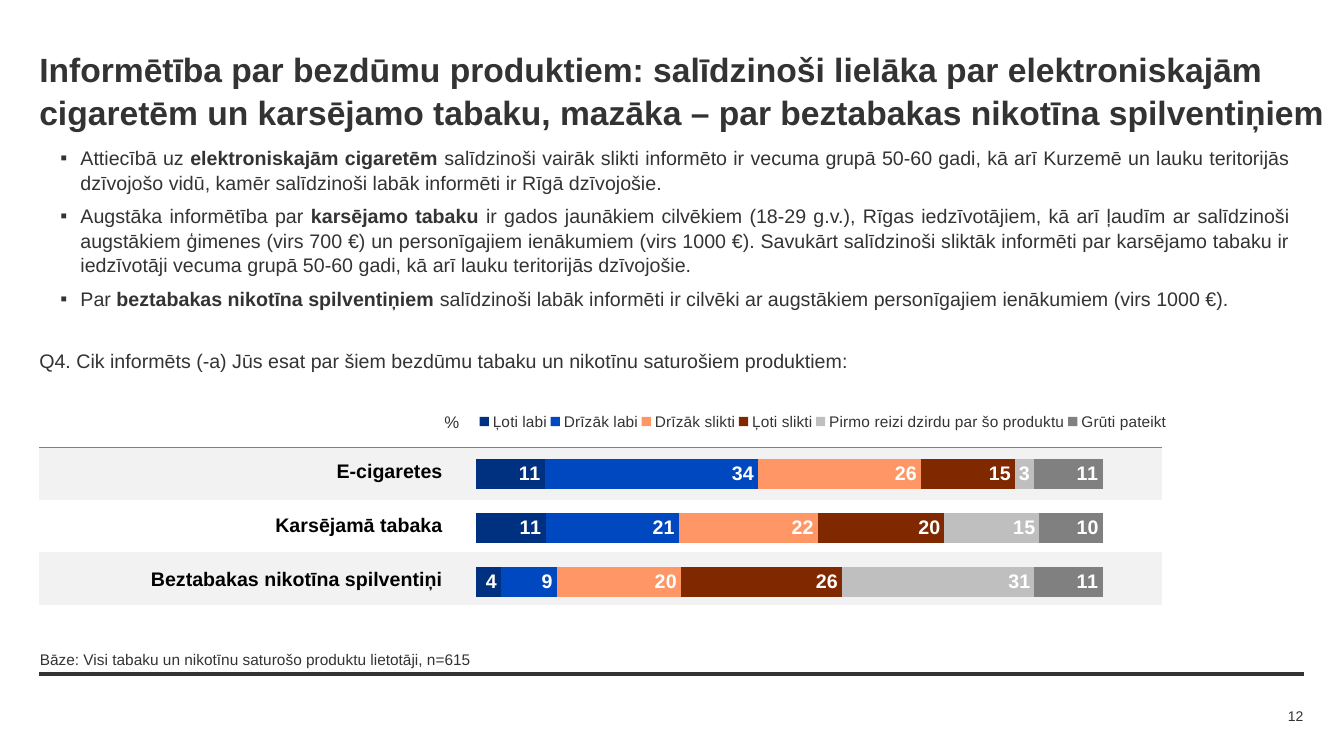
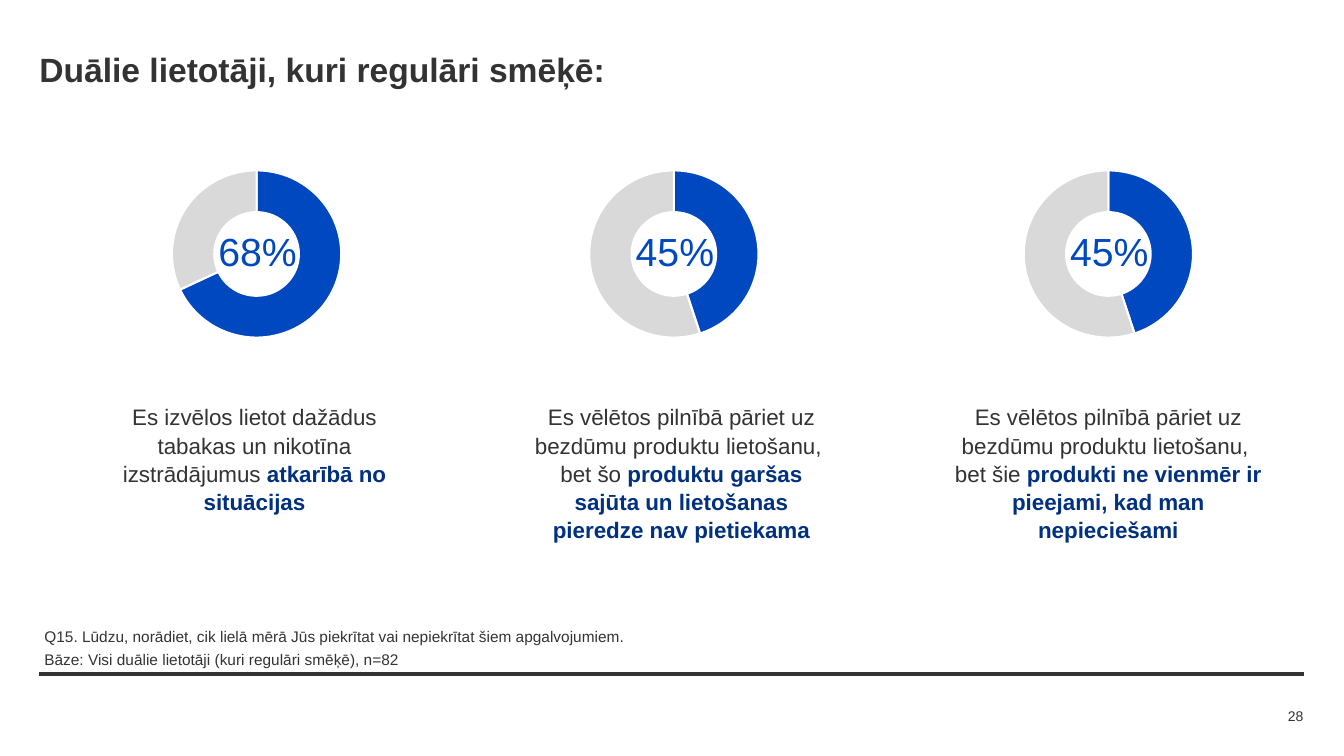
from lxml.etree import SubElement as Sub
from pptx import Presentation
from pptx.chart.data import CategoryChartData as Data
from pptx.dml.color import RGBColor as RGB
from pptx.enum.chart import XL_CHART_TYPE as Kind, XL_LABEL_POSITION as Spot, XL_LEGEND_POSITION as Side
from pptx.enum.shapes import MSO_CONNECTOR as Link
from pptx.enum.text import MSO_ANCHOR as Anchor, PP_ALIGN as Align
from pptx.oxml import parse_xml
from pptx.oxml.ns import nsdecls, qn
from pptx.util import Inches, Pt

INK = RGB(0x33, 0x33, 0x33)
BLACK = RGB(0, 0, 0)
WHITE = RGB(0xFF, 0xFF, 0xFF)
NAVY = RGB(0x00, 0x30, 0x80)
BLUE = RGB(0x00, 0x48, 0xBF)
PEACH = RGB(0xFF, 0x96, 0x66)
BROWN = RGB(0x80, 0x28, 0x00)
SILVER = RGB(0xBF, 0xBF, 0xBF)
GRAY = RGB(0x80, 0x80, 0x80)
PALE = RGB(0xD9, 0xD9, 0xD9)
BAND = RGB(0xF2, 0xF2, 0xF2)
FONT = "Arial"
CELL = Inches(0.1)
WIDE, HIGH = 133.33, 75
PLAIN = "{2D5ABB26-0587-4C30-8999-92F81FD0307C}"

HEAD_1 = ("Informētība par bezdūmu produktiem: salīdzinoši lielāka par elektroniskajām "
          "cigaretēm un karsējamo tabaku, mazāka – par beztabakas nikotīna spilventiņiem")
POINTS = [
    "Attiecībā uz *elektroniskajām cigaretēm *salīdzinoši vairāk slikti informēto ir vecuma grupā "
    "50-60 gadi, kā arī Kurzemē un lauku teritorijās dzīvojošo vidū, kamēr salīdzinoši labāk "
    "informēti ir Rīgā dzīvojošie.",
    "Augstāka informētība par *karsējamo tabaku *ir gados jaunākiem cilvēkiem (18-29 g.v.), Rīgas "
    "iedzīvotājiem, kā arī ļaudīm ar salīdzinoši augstākiem ģimenes (virs 700 €) un personīgajiem "
    "ienākumiem (virs 1000 €). Savukārt salīdzinoši sliktāk informēti par karsējamo tabaku ir "
    "iedzīvotāji vecuma grupā 50-60 gadi, kā arī lauku teritorijās dzīvojošie.",
    "Par *beztabakas nikotīna spilventiņiem *salīdzinoši labāk informēti ir cilvēki ar augstākiem "
    "personīgajiem ienākumiem (virs 1000 €).",
]
GOODS = ["E-cigaretes", "Karsējamā tabaka", "Beztabakas nikotīna spilventiņi"]
SERIES = [
    ("Ļoti labi", (11, 11, 4), NAVY),
    ("Drīzāk labi", (34, 21, 9), BLUE),
    ("Drīzāk slikti", (26, 22, 20), PEACH),
    ("Ļoti slikti", (15, 20, 26), BROWN),
    ("Pirmo reizi dzirdu par šo produktu", (3, 15, 31), SILVER),
    ("Grūti pateikt", (11, 10, 11), GRAY),
]
SWITCH = "Es vēlētos pilnībā pāriet uz bezdūmu produktu lietošanu, "
RINGS = [
    (68, 14.9, ["Es izvēlos lietot dažādus tabakas un nikotīna izstrādājumus *atkarībā no situācijas"]),
    (45, 56.3, [SWITCH, "bet šo *produktu garšas sajūta un lietošanas pieredze nav pietiekama"]),
    (45, 99.4, [SWITCH, "bet šie *produkti ne vienmēr ir pieejami, kad man nepieciešami"]),
]


def grid(*cells):
    """Turn grid cells into lengths."""
    return [round(n * CELL) for n in cells]


def part(box, x, y, w, h):
    """Place a part within a box, in grid cells."""
    return box[0] + x, box[1] + y, w, h


def style(font, size, color=INK, bold=None):
    """Set the face, size, colour and weight of a font."""
    font.name, font.size, font.bold = FONT, Pt(size), bold
    font.color.rgb = color


def write(frame, paras, size=14, color=INK, bold=False, strong=None, align=Align.LEFT,
          anchor=Anchor.TOP, pad=(0, 0, 0, 0), gap=0, lead=1.05, mark=None):
    """Fill a frame with paragraphs, where stars set off strong words."""
    frame.word_wrap, frame.vertical_anchor = True, anchor
    (frame.margin_left, frame.margin_top,
     frame.margin_right, frame.margin_bottom) = grid(*pad)
    for i, text in enumerate(paras):
        para = frame.paragraphs[0] if i == 0 else frame.add_paragraph()
        para.alignment, para.line_spacing = align, lead
        para.space_before = Pt(gap if i else 0)
        if mark:
            props = para._p.get_or_add_pPr()
            props.set("marL", str(Inches(0.7)))
            props.set("indent", str(-Inches(0.2)))
            Sub(props, qn("a:buFont")).set("typeface", FONT)
            Sub(props, qn("a:buChar")).set("char", mark)
        for j, words in enumerate(text.split("*")):
            if words:
                run = para.add_run()
                run.text = words
                style(run.font, size, strong or color if j % 2 else color, bold or j % 2 == 1)


def label(slide, box, *paras, **form):
    """Add a text box."""
    write(slide.shapes.add_textbox(*grid(*box)).text_frame, paras, **form)


def base(deck, head, page, note, left, width, tall):
    """Start a slide with title, rule, base note and page number."""
    slide = deck.slides.add_slide(deck.slide_layouts[5])
    title = slide.shapes.title
    title.left, title.top, title.width, title.height = grid(3.9, 4.7, width, tall)
    write(title.text_frame, [head], size=24, bold=True)
    rule = slide.shapes.add_connector(Link.STRAIGHT, *grid(3.9, 66.9, 129.4, 66.9))
    rule.line.color.rgb, rule.line.width = INK, Pt(3)
    Sub(rule._element.spPr, qn("a:effectLst"))
    label(slide, (left, 64.4, 98, 1.9), note, size=11, anchor=Anchor.BOTTOM)
    label(slide, (118.7, 69.9, 10.6, 2.2), page, size=10, align=Align.RIGHT, anchor=Anchor.MIDDLE)
    return slide


def table(slide, box, rows, cols):
    """Add a bare table with the given column widths."""
    shape = slide.shapes.add_table(rows, len(cols), *grid(*box))
    body = shape.table
    body.first_row = body.horz_banding = False
    body._tbl.tblPr.find(qn("a:tableStyleId")).text = PLAIN
    for col, width in zip(body.columns, cols):
        col.width = grid(width)[0]
    for cell in body.iter_cells():
        cell.fill.background()
    return body


def edge(cell, color, width):
    """Draw the top border of a cell."""
    cell._tc.get_or_add_tcPr().insert(0, parse_xml(
        f'<a:lnT {nsdecls("a")} w="{Pt(width)}"><a:solidFill><a:srgbClr val="{color}"/>'
        '</a:solidFill></a:lnT>'))


def pin(node, spot, shares, inner=False):
    """Fix the place of a chart part by shares of the chart."""
    for old in node.findall(qn("c:layout")):
        node.remove(old)
    lay = parse_xml(f'<c:layout {nsdecls("c")}><c:manualLayout/></c:layout>')
    if inner:
        Sub(lay[0], qn("c:layoutTarget")).set("val", "inner")
    for name in ("xMode", "yMode"):
        Sub(lay[0], qn("c:" + name)).set("val", "edge")
    for name, share in zip("xywh", shares):
        Sub(lay[0], qn("c:" + name)).set("val", str(share))
    node.insert(spot, lay)


def plot(slide, box, kind, cats, rows, size, shares):
    """Add a chart with a fixed plot area."""
    data = Data()
    data.categories = cats
    for name, vals in rows:
        data.add_series(name, vals)
    chart = slide.shapes.add_chart(kind, *grid(*box), data).chart
    chart.has_title = chart.has_legend = False
    style(chart.font, size)
    pin(chart._chartSpace.chart.plotArea, 0, shares, True)
    return chart


def bars(slide, box):
    """Draw the stacked bars over a banded table with row names."""
    bands = table(slide, part(box, 0, 3.6, 111.4, 20.8), 4, (29.1, 82.3))
    for i in range(4):
        for cell in bands.rows[i].cells:
            if i % 2 == 0:
                cell.fill.solid()
                cell.fill.fore_color.rgb = BAND
            if i == 0:
                edge(cell, GRAY, 0.5)
    chart = plot(slide, part(box, 16.7, -14.4, 111, 46), Kind.BAR_STACKED_100, "123",
                 [row[:2] for row in SERIES], 18, (0.24, 0.39, 0.56, 0.35))
    chart.category_axis.reverse_order = True
    chart.value_axis.has_major_gridlines = False
    chart.category_axis.visible = chart.value_axis.visible = False
    chart.plots[0].gap_width, chart.plots[0].overlap = 78, 100
    for row, (_, vals, color) in zip(chart.series, SERIES):
        row.format.fill.solid()
        row.format.fill.fore_color.rgb = color
        tags = row.data_labels
        tags.show_value, tags.number_format, tags.number_format_is_linked = True, "#", False
        tags.position = Spot.CENTER if min(vals) < 4 else Spot.INSIDE_END
        style(tags.font, 14, WHITE, True)
        if min(vals) < 4:
            for i in (1, 2):
                tag = row.points[i].data_label
                style(tag.font, 14, WHITE, True)
                tag.position = Spot.INSIDE_END
    chart.has_legend = True
    key = chart.legend
    key.position, key.include_in_layout = Side.RIGHT, False
    style(key.font, 11)
    pin(key._element, 1, (0.24, 0.31, 0.62, 0.05))
    names = table(slide, part(box, 3.2, 3.3, 36.9, 16), 3, (36.9,))
    for cell, name in zip(names.iter_cells(), GOODS):
        write(cell.text_frame, [name], color=BLACK, bold=True, align=Align.RIGHT, lead=1)
        cell.vertical_anchor = Anchor.MIDDLE
        (cell.margin_left, cell.margin_top,
         cell.margin_right, cell.margin_bottom) = grid(0.1, 0.1, 0.1, 0)
    label(slide, part(box, 40.2, 0, 3.7, 2), "%", size=12)


def ring(slide, box, share):
    """Draw one doughnut with its share in the middle."""
    chart = plot(slide, box, Kind.DOUGHNUT, "12", [("Series 1", (share, 100 - share))], 10,
                 (0.04, 0, 0.94, 1))
    chart.plots[0]._element.find(qn("c:holeSize")).set("val", "85")
    for i, color in enumerate((BLUE, PALE)):
        form = chart.series[0].points[i].format
        form.fill.solid()
        form.fill.fore_color.rgb = color
        form.line.color.rgb, form.line.width = WHITE, Pt(1.5)
    label(slide, part(box, 1.4, 5.7, 18.5, 4.5), f"{share}%", size=28, color=BLUE,
          align=Align.CENTER, anchor=Anchor.MIDDLE)


def aware(deck):
    """Build the slide on how well products are known."""
    slide = base(deck, HEAD_1, "12", "Bāze: Visi tabaku un nikotīnu saturošo produktu lietotāji, n=615",
                 3.95, 128.3, 13.6)
    bars(slide, (3.9, 40.8))
    label(slide, (3.9, 34.5, 125.4, 5.2),
          "Q4. Cik informēts (-a) Jūs esat par šiem bezdūmu tabaku un nikotīnu saturošiem produktiem:")
    label(slide, (0, 13.9, 129, 16.8), *POINTS, align=Align.JUSTIFY, gap=6, mark="▪",
          pad=(1, 0.5, 1, 0.5))


def dual(deck):
    """Build the slide on dual users."""
    slide = base(deck, "Duālie lietotāji, kuri regulāri smēķē:", "28",
                 "Bāze: Visi duālie lietotāji (kuri regulāri smēķē), n=82", 4.4, 119.9, 7.9)
    for i, (share, left, paras) in enumerate(RINGS):
        ring(slide, (left, 16.8, 20.7, 16.8), share)
        label(slide, (9.9 + 42.35 * i, 39.9, 30.7, 14.2), *paras, size=16, strong=NAVY,
              align=Align.CENTER)
    label(slide, (4.4, 62.1, 61.1, 2.1),
          "Q15. Lūdzu, norādiet, cik lielā mērā Jūs piekrītat vai nepiekrītat šiem apgalvojumiem.",
          size=11)


def main():
    """Build and save the deck."""
    deck = Presentation()
    deck.slide_width, deck.slide_height = grid(WIDE, HIGH)
    aware(deck)
    dual(deck)
    deck.save("out.pptx")


if __name__ == "__main__":
    main()
